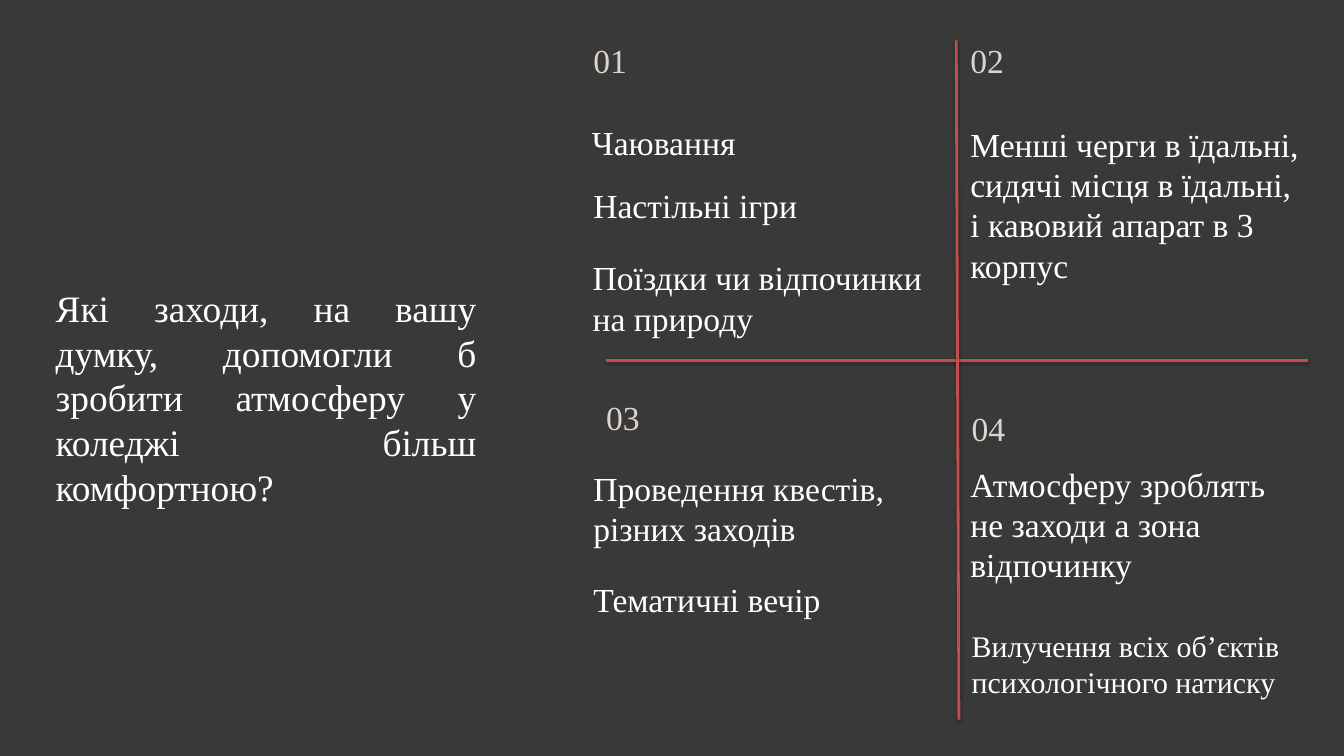
from dataclasses import dataclass

from lxml import etree
from pptx import Presentation
from pptx.dml.color import RGBColor
from pptx.enum import shapes, text
from pptx.oxml import ns
from pptx.util import Inches, Pt


@dataclass(frozen=True)
class Theme:
    font: str = "Times New Roman"
    background: RGBColor = RGBColor(0x39, 0x39, 0x39)
    body: RGBColor = RGBColor(0xFF, 0xFF, 0xFF)
    number: RGBColor = RGBColor(0xDF, 0xD4, 0xCB)
    rule: RGBColor = RGBColor(0xC0, 0x50, 0x4D)
    question_size: int = 40
    answer_size: int = 36
    small_size: int = 32
    rule_width: int = 3


THEME = Theme()

QUESTION = ("Які заходи, на вашу думку, допомогли б зробити атмосферу "
            "у коледжі більш комфортною?")

# Quadrant: left, top, number, number indent, answers.
# Answer: words, indent, drop, width, height, size.
QUADRANTS = [
    (8.83, 0.6, "01", 0, [
        ("Чаювання", -0.02, 1.22, 4.43, 0.61, THEME.answer_size),
        ("Настільні ігри", 0, 2.15, 4.43, 0.61, THEME.answer_size),
        ("Поїздки чи відпочинки на природу", -0.01, 3.23, 5.33, 1.21,
         THEME.answer_size),
    ]),
    (14.44, 0.6, "02", 0, [
        ("Менші черги в їдальні, сидячі місця в їдальні, "
         "і кавовий апарат в 3 корпус", 0, 1.24, 5.03, 2.42,
         THEME.answer_size),
    ]),
    (8.83, 5.91, "03", 0.19, [
        ("Проведення квестів, різних заходів", 0, 1.05, 5.42, 1.21,
         THEME.answer_size),
        ("Тематичні вечір", 0, 2.7, 4.43, 0.61, THEME.answer_size),
    ]),
    (14.44, 6.07, "04", 0.02, [
        ("Атмосферу зроблять не заходи а зона відпочинку", 0, 0.83, 4.43, 1.82,
         THEME.answer_size),
        ("Вилучення всіх обʼєктів психологічного натиску", 0.02, 3.27, 5.24,
         1.08, THEME.small_size),
    ]),
]


def add_words(page, words, left, top, width, height, size, color=THEME.body,
              align=text.PP_ALIGN.LEFT):
    box = page.shapes.add_textbox(Inches(left), Inches(top),
                                  Inches(width), Inches(height))
    frame = box.text_frame
    frame.word_wrap = True
    frame.auto_size = text.MSO_AUTO_SIZE.SHAPE_TO_FIT_TEXT
    frame.margin_left = frame.margin_right = 0
    frame.margin_top = frame.margin_bottom = 0
    para = frame.paragraphs[0]
    para.alignment = align
    span = para.add_run()
    span.text = words
    span.font.name = THEME.font
    span.font.size = Pt(size)
    span.font.color.rgb = color


def add_quadrant(page, left, top, number, number_indent, answers):
    add_words(page, number, left + number_indent, top, 4.43, 0.62,
              THEME.answer_size, THEME.number)
    for words, indent, drop, width, height, size in answers:
        add_words(page, words, left + indent, top + drop, width, height, size)


def add_shadow(line):
    """Give the line a soft shadow that falls straight down."""
    effects = etree.SubElement(line._element.spPr, ns.qn("a:effectLst"))
    shadow = etree.SubElement(effects, ns.qn("a:outerShdw"), blurRad=str(Pt(3.1)),
                              dist=str(Pt(1.8)), dir="5400000", rotWithShape="0")
    color = etree.SubElement(shadow, ns.qn("a:srgbClr"), val="000000")
    etree.SubElement(color, ns.qn("a:alpha"), val="35000")


def add_cross(page, left, top, width, height):
    """Draw the level rule and the slightly leaning upright rule."""
    level = top + 4.77
    foot = left + 5.25
    for ends in ((left, level, left + width, level),
                 (foot, top + height, foot - 0.04, top)):
        line = page.shapes.add_connector(shapes.MSO_CONNECTOR.STRAIGHT,
                                         *(Inches(end) for end in ends))
        line.line.color.rgb = THEME.rule
        line.line.width = Pt(THEME.rule_width)
        add_shadow(line)


def main():
    deck = Presentation()
    deck.slide_width, deck.slide_height = Inches(20), Inches(11.25)
    page = deck.slides.add_slide(deck.slide_layouts[6])
    page.background.fill.solid()
    page.background.fill.fore_color.rgb = THEME.background
    add_words(page, QUESTION, 0.83, 4.24, 6.26, 3.37, THEME.question_size,
              align=text.PP_ALIGN.JUSTIFY)
    for quadrant in QUADRANTS:
        add_quadrant(page, *quadrant)
    add_cross(page, 9.02, 0.6, 10.45, 10.11)
    deck.save("out.pptx")


if __name__ == "__main__":
    main()
